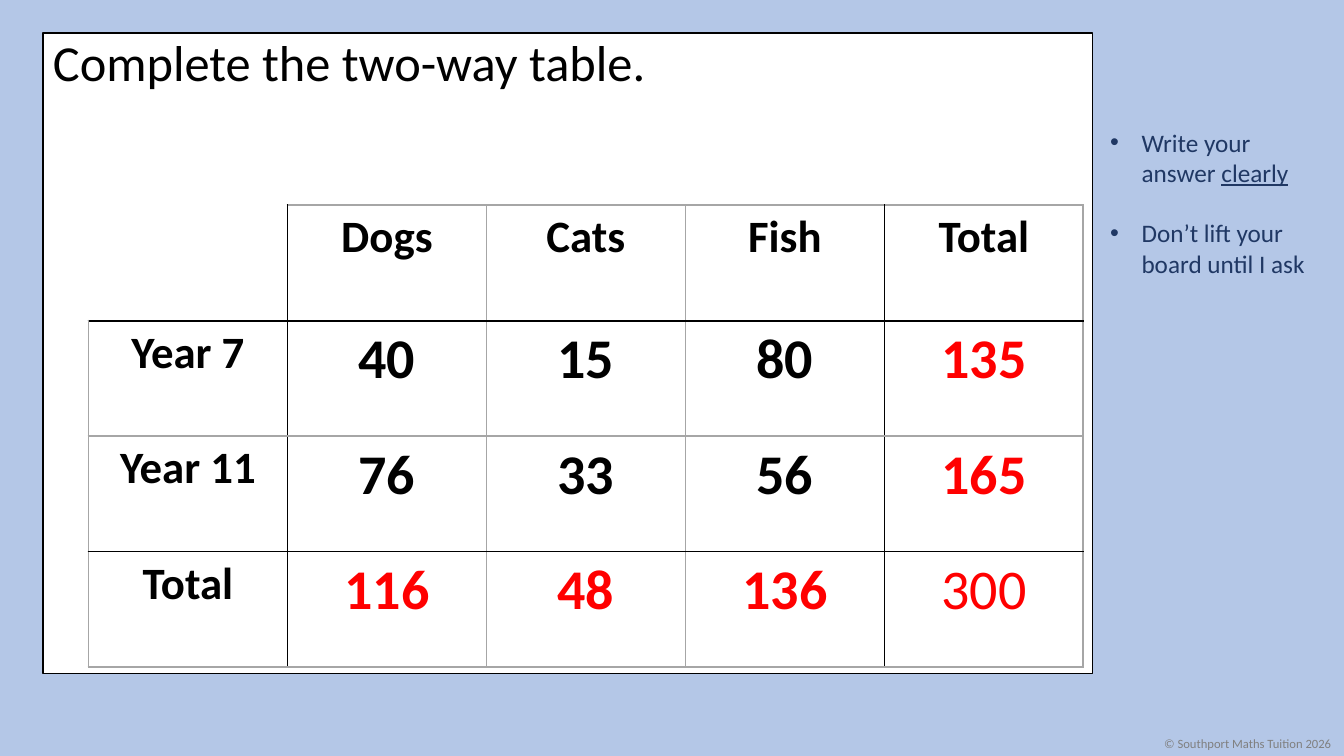
from lxml import etree
from pptx import Presentation
from pptx.dml.color import RGBColor
from pptx.enum import shapes, text
from pptx.oxml import ns
from pptx.util import Pt

COLOURS = {"sky": "B4C7E7", "white": "FFFFFF", "black": "000000", "grey": "A6A6A6",
           "navy": "203864", "footer": "808080", "answer": "FF0000"}


def rgb(name):
    return RGBColor.from_string(COLOURS[name])


def style(font, colour, **values):
    font.name = "Calibri"
    font.color.rgb = rgb(colour)
    for key, value in values.items():
        setattr(font, key, value)


prs = Presentation()
prs.slide_width, prs.slide_height = Pt(960), Pt(540)
s = prs.slides.add_slide(prs.slide_layouts[6])
s.background.fill.solid()
s.background.fill.fore_color.rgb = rgb("sky")

# White question panel
PANEL = Pt(30.7), Pt(23.7), Pt(749.5), Pt(457.2)
panel = s.shapes.add_shape(shapes.MSO_SHAPE.RECTANGLE, *PANEL)
panel.shadow.inherit = False
panel.fill.solid()
panel.fill.fore_color.rgb = rgb("white")
panel.line.color.rgb = rgb("black")
panel.line.width = Pt(1)

# Instructions at the right
reminders = [[("Write your answer ", False), ("clearly", True)],
             [("Don’t lift your board until I ask", False)]]
tf = s.shapes.add_textbox(Pt(785.8), Pt(87.2), Pt(167), Pt(116.5)).text_frame
tf.word_wrap = True
for i, runs in enumerate(reminders):
    p = tf.add_paragraph() if i else tf.paragraphs[0]
    pPr = p._p.get_or_add_pPr()
    pPr.set("marL", str(Pt(22.5)))
    pPr.set("indent", str(-Pt(22.5)))
    etree.SubElement(pPr, ns.qn("a:buFont"), typeface="Arial")
    etree.SubElement(pPr, ns.qn("a:buChar"), char="•")
    if i:
        p.space_before = Pt(21.6)
    for words, underlined in runs:
        r = p.add_run()
        r.text = words
        style(r.font, "navy", size=Pt(18), underline=underlined)

# Copyright line
tf = s.shapes.add_textbox(Pt(824.5), Pt(522), Pt(135.5), Pt(18)).text_frame
tf.word_wrap = False
r = tf.paragraphs[0].add_run()
r.text = "© Southport Maths Tuition 2026"
style(r.font, "footer", size=Pt(9))

# Two-way table: first the task, then the solution over it
rows = [["", "Dogs", "Cats", "Fish", "Total"],
        ["Year 7", "40", "15", "80", "135"],
        ["Year 11", "76", "33", "56", "165"],
        ["Total", "116", "48", "136", "300"]]
last_row, last_col = len(rows) - 1, len(rows[0]) - 1
col_rules = ["grey", "black", "grey", "grey", "black", "grey"]
row_rules = ["grey", "black", "grey", "black", "grey"]

for solved in (False, True):
    table = s.shapes.add_table(len(rows), len(rows[0]), Pt(63.2), Pt(146.6),
                               Pt(710.75), Pt(329.8)).table
    for flag in ("first_row", "horz_banding"):
        setattr(table, flag, False)
    for column in table.columns:
        column.width = Pt(142.15)
    for y, row in enumerate(rows):
        table.rows[y].height = Pt(82.45)
        for x, words in enumerate(row):
            cell = table.cell(y, x)
            borders = {"lnL": col_rules[x], "lnR": col_rules[x + 1],
                       "lnT": row_rules[y], "lnB": row_rules[y + 1]}
            if not words:  # the corner is open at its outer sides
                borders.update(lnL=None, lnT=None)
            for side, colour in borders.items():
                ln = etree.SubElement(cell._tc.get_or_add_tcPr(), ns.qn("a:" + side),
                                      w=str(Pt(1.5)))
                fill = etree.SubElement(ln, ns.qn("a:solidFill" if colour else "a:noFill"))
                if colour:
                    etree.SubElement(fill, ns.qn("a:srgbClr"), val=COLOURS[colour])
            cell.fill.solid()
            cell.fill.fore_color.rgb = rgb("white")

            heading = x == 0 or y == 0
            answer = not heading and (x == last_col or y == last_row)
            if not words or (answer and not solved):
                continue
            p = cell.text_frame.paragraphs[0]
            p.alignment = text.PP_ALIGN.CENTER
            r = p.add_run()
            r.text = words
            style(r.font, "answer" if answer else "black", size=Pt(32 if heading else 40),
                  bold=(y, x) != (last_row, last_col))

# Question
tf = s.shapes.add_textbox(*PANEL).text_frame
tf.word_wrap = True
p = tf.paragraphs[0]
p.line_spacing = 0.9
r = p.add_run()
r.text = "Complete the two-way table."
style(r.font, "black", size=Pt(36))

prs.save("out.pptx")
